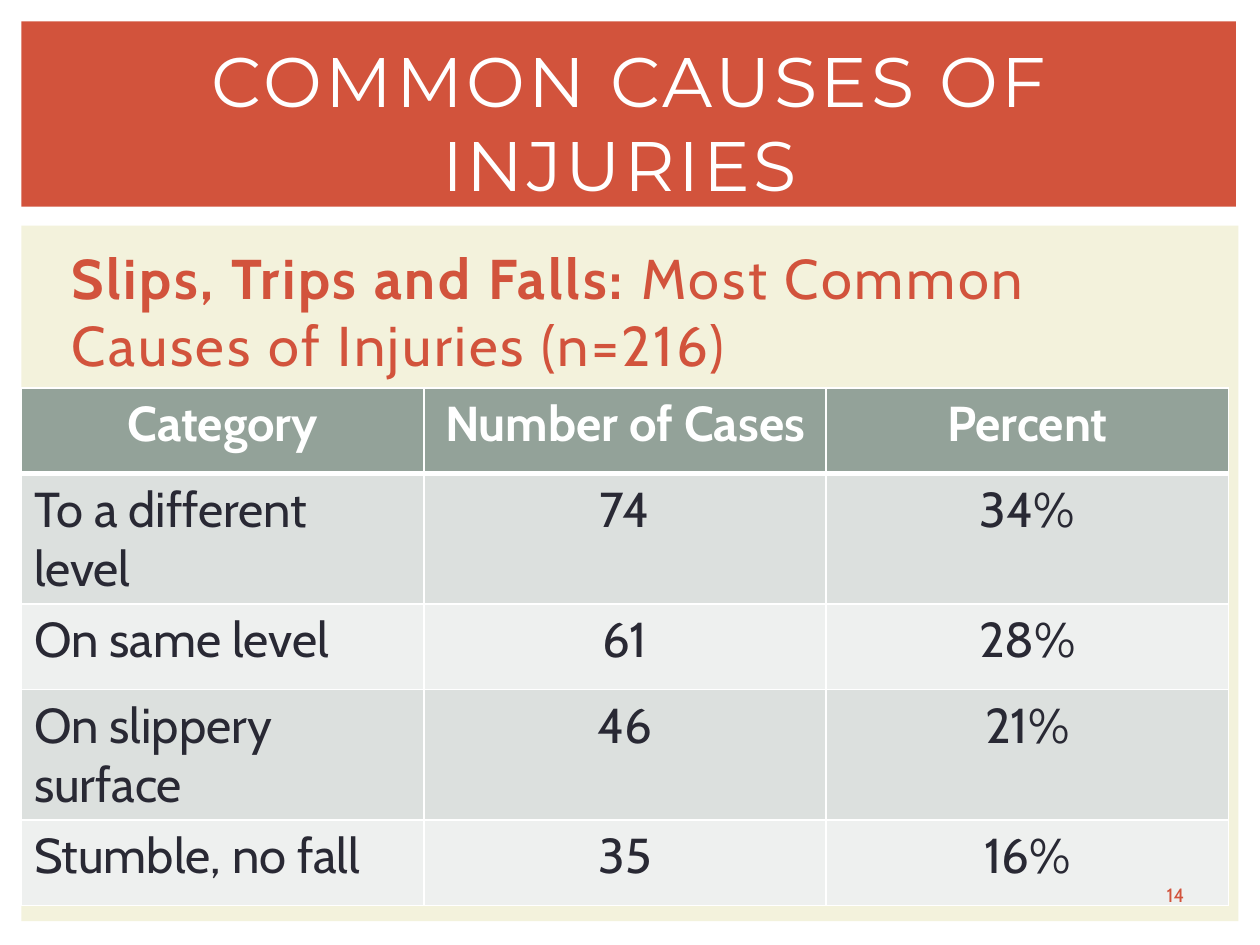
from lxml import etree
from pptx import Presentation
from pptx.dml.color import RGBColor
from pptx.enum.shapes import MSO_SHAPE
from pptx.enum.text import MSO_ANCHOR, PP_ALIGN
from pptx.oxml.ns import qn
from pptx.util import Inches, Pt

RECT = MSO_SHAPE.RECTANGLE
LEFT, CENTER = PP_ALIGN.LEFT, PP_ALIGN.CENTER
TOP, MIDDLE = MSO_ANCHOR.TOP, MSO_ANCHOR.MIDDLE

RED, CREAM, WHITE, INK = "D2533C", "F3F2DC", "FFFFFF", "292934"
HEADER_FILL = "93A299"
BAND_FILLS = ("DCE0DE", "EEF0EF")

CAUSES = [
    ("Category", "Number of Cases", "Percent"),
    ("To a different level", "74", "34%"),
    ("On same level", "61", "28%"),
    ("On slippery surface", "46", "21%"),
    ("Stumble, no fall", "35", "16%"),
]


def color(hex_code):
    return RGBColor.from_string(hex_code)


def add_run(paragraph, text, size, ink, font="Cabin", bold=False, spacing=0):
    run = paragraph.add_run()
    run.text = text
    run.font.name = font
    run.font.size = Pt(size)
    run.font.bold = bold
    run.font.color.rgb = color(ink)
    if spacing:
        run.font._element.set("spc", str(int(spacing * 100)))


def add_panel(slide, left, top, width, height, fill):
    panel = slide.shapes.add_shape(
        RECT, Inches(left), Inches(top), Inches(width), Inches(height))
    panel.shadow.inherit = False
    panel.fill.solid()
    panel.fill.fore_color.rgb = color(fill)
    panel.line.fill.background()


def add_text(slide, left, top, width, height, align=LEFT, anchor=TOP):
    """Add an empty wrapped text box and return its first paragraph."""
    frame = slide.shapes.add_textbox(
        Inches(left), Inches(top), Inches(width), Inches(height)).text_frame
    frame.word_wrap = True
    frame.vertical_anchor = anchor
    paragraph = frame.paragraphs[0]
    paragraph.alignment = align
    return paragraph


def set_borders(cell, top=1, bottom=1):
    properties = cell._tc.get_or_add_tcPr()
    for side, width in (("L", 1), ("R", 1), ("T", top), ("B", bottom)):
        line = etree.SubElement(properties, qn(f"a:ln{side}"), w=str(Pt(width)))
        fill = etree.SubElement(line, qn("a:solidFill"))
        etree.SubElement(fill, qn("a:srgbClr"), val=WHITE)


def add_causes_table(slide, left, top, width, row_height):
    rows, columns = len(CAUSES), len(CAUSES[0])
    table = slide.shapes.add_table(
        rows, columns, Inches(left), Inches(top),
        Inches(width), Inches(row_height * rows)).table
    for r, values in enumerate(CAUSES):
        header = r == 0
        fill = HEADER_FILL if header else BAND_FILLS[(r - 1) % 2]
        for c, value in enumerate(values):
            cell = table.cell(r, c)
            # A thick rule separates the header from the data
            set_borders(cell, top=3 if r == 1 else 1, bottom=3 if header else 1)
            cell.fill.solid()
            cell.fill.fore_color.rgb = color(fill)
            paragraph = cell.text_frame.paragraphs[0]
            paragraph.alignment = CENTER if header or c else LEFT
            add_run(paragraph, value, 28, WHITE if header else INK, bold=header)


def main():
    prs = Presentation()
    prs.slide_width, prs.slide_height = Inches(10), Inches(7.5)
    slide = prs.slides.add_slide(prs.slide_layouts[6])

    # Background panels
    add_panel(slide, 0.17, 1.79, 9.66, 5.52, CREAM)
    add_panel(slide, 0.17, 0.17, 9.64, 1.47, RED)

    # Title
    title = add_text(slide, 0.42, 0.39, 9.17, 1.15, CENTER, MIDDLE)
    add_run(title, "COMMON CAUSES OF INJURIES ", 40, WHITE, "Montserrat", spacing=2)

    # Lead statement
    lead = add_text(slide, 0.47, 1.88, 9.14, 1.2)
    add_run(lead, "Slips, Trips and Falls: ", 32, RED, bold=True, spacing=1.5)
    add_run(lead, "Most Common", 32, RED, spacing=1.5)
    lead.add_line_break()
    add_run(lead, "Causes of Injuries (n=216)", 32, RED, spacing=1.5)

    # Cases by category
    add_causes_table(slide, 0.17, 3.08, 9.58, 0.68)

    # Slide number
    number = add_text(slide, 9.01, 6.95, 0.64, 0.3, CENTER, MIDDLE)
    add_run(number, "14", 11, RED)

    prs.save("out.pptx")


if __name__ == "__main__":
    main()
